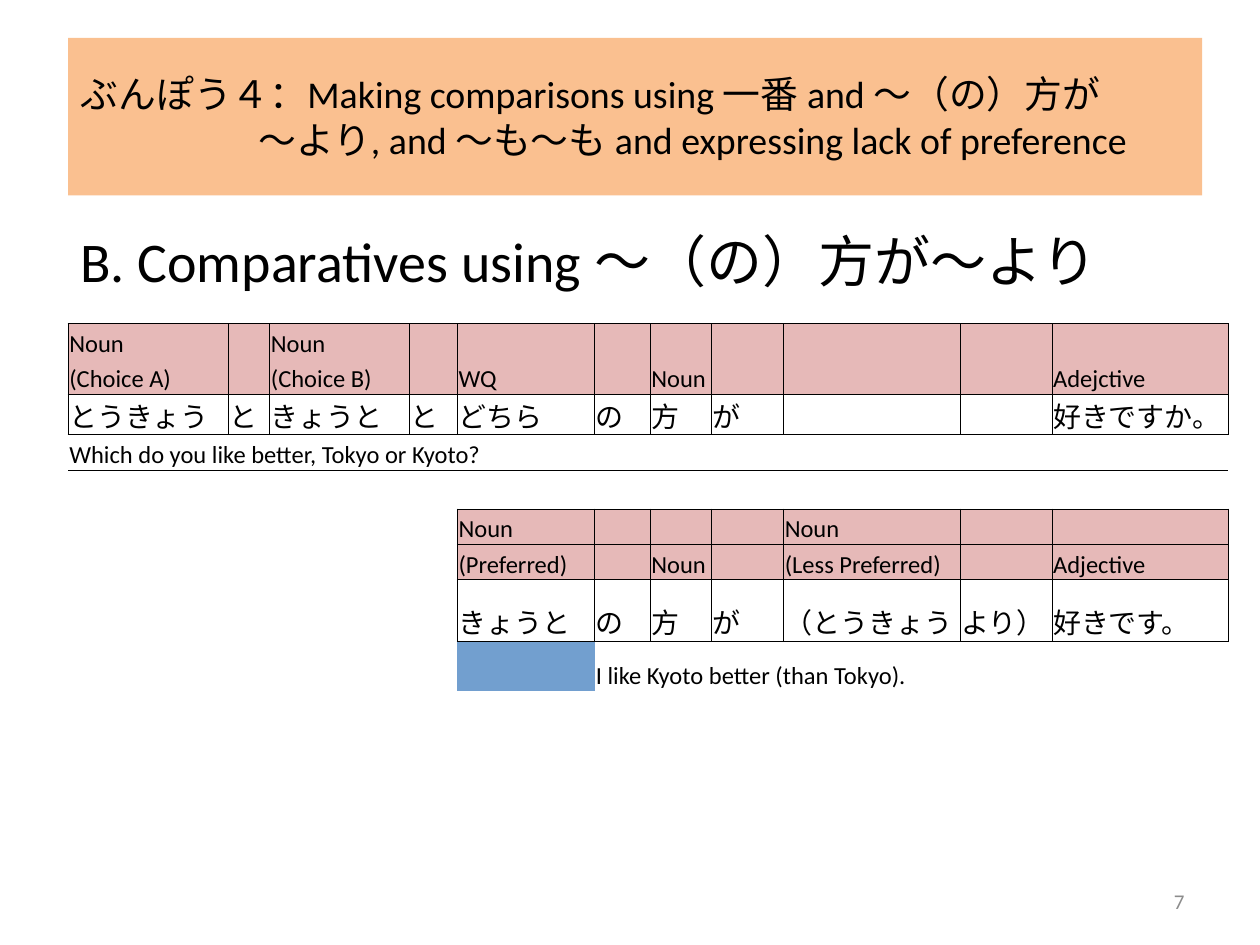
from lxml import etree
from pptx import Presentation
from pptx.dml.color import RGBColor
from pptx.enum.text import MSO_ANCHOR, MSO_AUTO_SIZE, PP_ALIGN
from pptx.oxml.ns import qn
from pptx.util import Inches, Pt

LEFT, RIGHT = PP_ALIGN.LEFT, PP_ALIGN.RIGHT
TOP, MIDDLE, BOTTOM = MSO_ANCHOR.TOP, MSO_ANCHOR.MIDDLE, MSO_ANCHOR.BOTTOM
FIXED = MSO_AUTO_SIZE.NONE

THEME = {
    "font": "Calibri", "ink": "000000", "page": "8C8C8C",
    "band": "FAC090", "head": "E6B9B8",
    "title": 21.6, "topic": 32, "label": 14, "word": 16, "number": 12,
    "line": 0.5, "plain": "{2D5ABB26-0587-4C30-8999-92F81FD0307C}",
}

TITLE = ["ぶんぽう４：Making comparisons using 一番 and ～（の）方が",
         "～より, and ～も～も and expressing lack of preference"]
TOPIC = "B. Comparatives using ～（の）方が～より"
PAGE = "7"

WIDTHS = [1.27, 0.33, 1.11, 0.1, 0.28, 1.09, 0.44, 0.49, 0.57, 1.4, 0.73, 1.4]
ROWS = [
    ("top", 0, 0.28, {0: "Noun", 2: "Noun"}),
    ("head", 0, 0.28, {0: "(Choice A)", 2: "(Choice B)", 5: "WQ", 7: "Noun",
                       11: "Adejctive"}),
    ("body", 0, 0.32, {0: "とうきょう", 1: "と", 2: "きょうと", 3: "と", 5: "どちら",
                       6: "の", 7: "方", 8: "が", 11: "好きですか。"}),
    ("note", 0, 0.28, {0: "Which do you like better, Tokyo or Kyoto?"}),
    ("gap", 0, 0.31, {}),
    ("top", 5, 0.28, {5: "Noun", 9: "Noun"}),
    ("head", 5, 0.28, {5: "(Preferred)", 7: "Noun", 9: "(Less Preferred)",
                       11: "Adjective"}),
    ("body", 5, 0.49, {5: "きょうと", 6: "の", 7: "方", 8: "が", 9: "（とうきょう",
                       10: "より）", 11: "好きです。"}),
    ("note", 5, 0.28, {5: "I like Kyoto better (than Tokyo)."}),
]
SPANS = {(3, 0): 6, (8, 5): 4}
PAIR = (3, 2)


def write(frame, text, size="label", color="ink", align=LEFT, anchor=TOP,
          indent=0, before=0):
    frame.word_wrap = True
    frame.vertical_anchor = anchor
    lines = [text] if isinstance(text, str) else text
    for i, line in enumerate(lines):
        para = frame.paragraphs[0] if i == 0 else frame.add_paragraph()
        para.alignment = align
        para.space_before = Pt(before)
        if i and indent:
            para._p.get_or_add_pPr().set("marL", str(Inches(indent)))
        if not line:
            etree.SubElement(para._p, qn("a:endParaRPr"),
                             sz=str(int(THEME[size] * 100)))
            continue
        run = para.add_run()
        run.text = line
        run.font.name = THEME["font"]
        run.font.size = Pt(THEME[size])
        run.font.color.rgb = RGBColor.from_string(THEME[color])


def boxed(row, col):
    if not (0 <= row < len(ROWS) and 0 <= col < len(WIDTHS)):
        return False
    kind, start = ROWS[row][:2]
    return kind in ("top", "head", "body") and col >= start


def edges(cell, row, col, width):
    near = {"L": (row, col - 1), "R": (row, col + width),
            "T": (row - 1, col), "B": (row + 1, col)}
    kind = ROWS[row][0]
    open_side = {"top": "B", "head": "T"}.get(kind)
    props = cell._tc.get_or_add_tcPr()
    spot = 0
    for side, other in near.items():
        if side == "L" and cell.is_spanned:
            continue
        if not (boxed(row, col) or boxed(*other)):
            continue
        if side == open_side and boxed(row, col):
            continue
        line = etree.Element(qn("a:ln" + side), w=str(Pt(THEME["line"])))
        fill = etree.SubElement(line, qn("a:solidFill"))
        etree.SubElement(fill, qn("a:srgbClr"), val=THEME["ink"])
        props.insert(spot, line)
        spot += 1


def grid(slide):
    heights = [row[2] for row in ROWS]
    table = slide.shapes.add_table(
        len(ROWS), len(WIDTHS), Inches(0.54), Inches(2.57),
        Inches(sum(WIDTHS)), Inches(sum(heights))).table
    table.first_row = table.horz_banding = False
    table._tbl.tblPr.find(qn("a:tableStyleId")).text = THEME["plain"]
    for col, width in zip(table.columns, WIDTHS):
        col.width = Inches(width)
    for r, (kind, start, height, words) in enumerate(ROWS):
        table.rows[r].height = Inches(height)
        spans = {c: n for (row, c), n in SPANS.items() if row == r}
        if 0 not in spans:
            spans[PAIR[0]] = PAIR[1]
        for c, n in spans.items():
            table.cell(r, c).merge(table.cell(r, c + n - 1))
        for c in range(len(WIDTHS)):
            cell = table.cell(r, c)
            cell.margin_left = cell.margin_right = cell.margin_top = Inches(0.01)
            cell.margin_bottom = 0
            cell.vertical_anchor = BOTTOM
            if kind in ("top", "head") and c >= start:
                cell.fill.solid()
                cell.fill.fore_color.rgb = RGBColor.from_string(THEME["head"])
            else:
                cell.fill.background()
            write(cell.text_frame, words.get(c, ""), anchor=None,
                  size="word" if kind == "body" else "label")
            cell.vertical_anchor = BOTTOM
            edges(cell, r, c, spans.get(c, 1))


def place(shape, left, top, width, height):
    shape.left, shape.top = Inches(left), Inches(top)
    shape.width, shape.height = Inches(width), Inches(height)


def label(slide, box, text, **form):
    shape = slide.shapes.add_textbox(*map(Inches, box))
    write(shape.text_frame, text, **form)


def main():
    deck = Presentation()
    deck.slide_width, deck.slide_height = Inches(10), Inches(7.5)
    slide = deck.slides.add_slide(deck.slide_layouts[5])
    title = slide.shapes.title
    place(title, 0.54, 0.3, 9, 1.25)
    title.fill.solid()
    title.fill.fore_color.rgb = RGBColor.from_string(THEME["band"])
    title.text_frame.auto_size = FIXED
    write(title.text_frame, TITLE, size="title", anchor=MIDDLE, indent=1.41)
    label(slide, (0.54, 1.75, 9, 0.75), TOPIC, size="topic", before=6.4)
    label(slide, (7.17, 6.95, 2.33, 0.4), PAGE, size="number", color="page",
          align=RIGHT, anchor=MIDDLE)
    grid(slide)
    deck.save("out.pptx")


if __name__ == "__main__":
    main()
